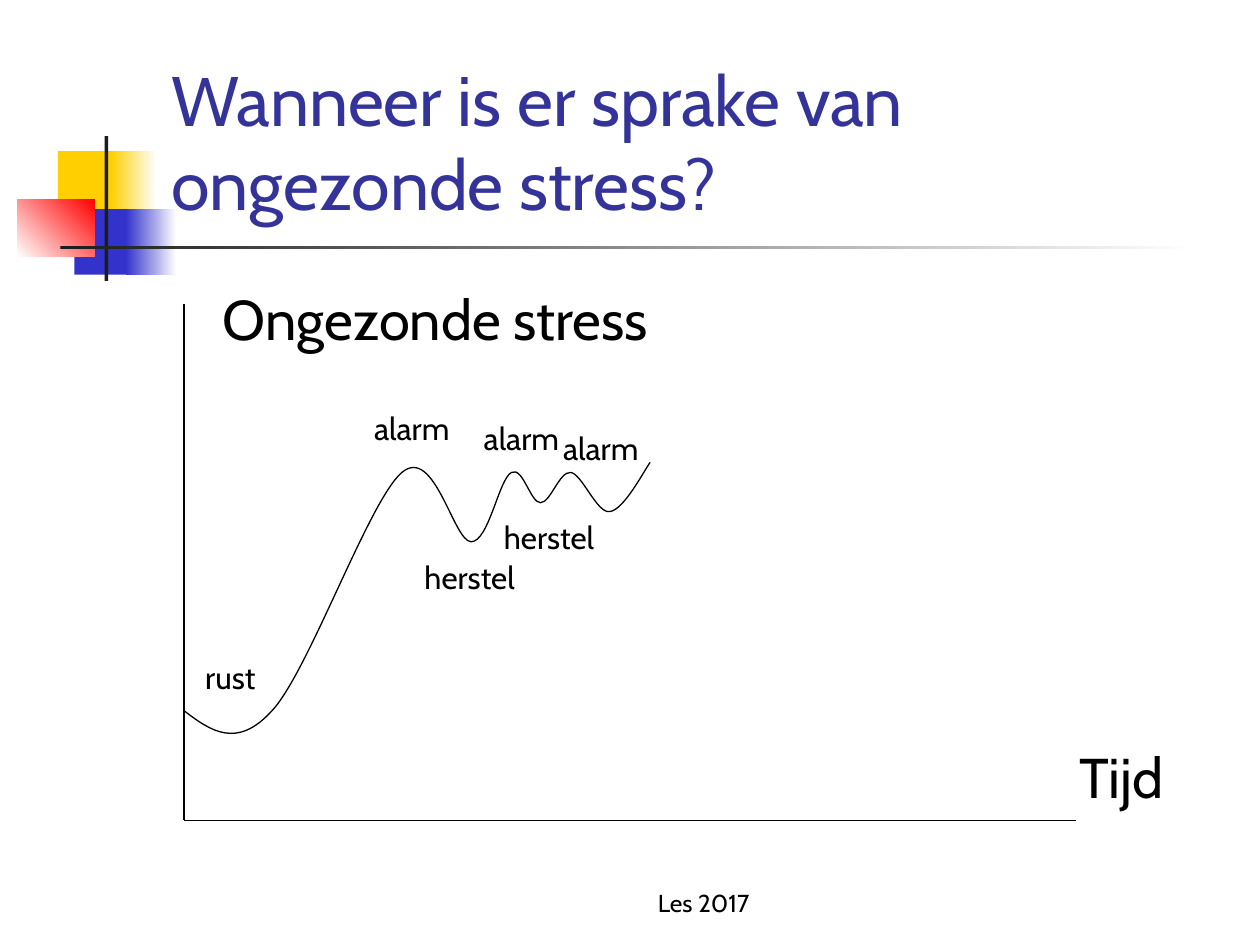
"""Build a slide that shows the course of unhealthy stress over time."""
from typing import NamedTuple

from lxml.etree import SubElement
from pptx import Presentation
from pptx.dml.color import RGBColor
from pptx.enum.shapes import MSO_CONNECTOR, MSO_SHAPE
from pptx.enum.text import MSO_ANCHOR, MSO_AUTO_SIZE, PP_ALIGN
from pptx.oxml.ns import qn
from pptx.util import Inches, Pt

FONT = "Cabin"
BLACK, WHITE, CHARCOAL = "000000", "FFFFFF", "1C1C1C"
YELLOW, BLUE, RED, NAVY = "FFCF01", "3333CC", "FF0000", "333399"


class Box(NamedTuple):
    left: float
    top: float
    width: float
    height: float


class Block(NamedTuple):
    box: Box
    start: str
    end: str = ""
    angle: int = 0


class Label(NamedTuple):
    text: str
    box: Box
    size: int = 18
    space_before: float = 3.6


BLOCKS = [
    Block(Box(0.46, 1.2, 0.48, 0.52), YELLOW),
    Block(Box(0.88, 1.2, 0.36, 0.52), YELLOW, WHITE),
    Block(Box(0.59, 1.66, 0.46, 0.52), BLUE),
    Block(Box(1, 1.66, 0.4, 0.52), BLUE, WHITE),
    Block(Box(0.14, 1.58, 0.61, 0.46), WHITE, RED, 45),
    Block(Box(0.83, 1.08, 0.03, 1.15), CHARCOAL),
    Block(Box(0.48, 1.95, 9, 0.03), CHARCOAL, WHITE),
]
LABELS = [
    Label("Tijd", Box(8.47, 5.84, 0.94, 0.63), 32, 0),
    Label("rust", Box(1.53, 5.17, 0.62, 0.4)),
    Label("alarm", Box(2.87, 3.2, 0.82, 0.4), space_before=0),
    Label("herstel", Box(3.27, 4.38, 0.95, 0.4)),
    Label("alarm", Box(3.74, 3.28, 0.82, 0.4)),
    Label("herstel", Box(3.9, 4.06, 0.95, 0.4)),
    Label("alarm", Box(4.37, 3.36, 0.82, 0.4)),
]
ORIGIN, AXIS_TOP, AXIS_END = (1.46, 6.51), (1.46, 2.41), (8.54, 6.51)
STRESS_START = (1.46, 5.64)
STRESS_CURVE = [
    (1.67, 5.8), (1.88, 5.95), (2.16, 5.64),
    (2.45, 5.33), (2.93, 3.97), (3.19, 3.75),
    (3.45, 3.53), (3.6, 4.3), (3.74, 4.3),
    (3.88, 4.3), (3.96, 3.8), (4.06, 3.75),
    (4.15, 3.7), (4.21, 3.99), (4.29, 3.99),
    (4.37, 3.99), (4.44, 3.74), (4.53, 3.75),
    (4.62, 3.76), (4.74, 4.08), (4.84, 4.06),
    (4.95, 4.05), (5.11, 3.74), (5.16, 3.67),
]


def color(value: str) -> RGBColor:
    return RGBColor.from_string(value)


def lengths(values) -> list:
    return [Inches(value) for value in values]


def style_text(frame, text: str, size: int, ink: str = BLACK,
               align=PP_ALIGN.LEFT, space_before: float = 0):
    frame.text = text
    paragraph = frame.paragraphs[0]
    paragraph.alignment = align
    paragraph.space_before = Pt(space_before)
    font = paragraph.runs[0].font
    font.name, font.size = FONT, Pt(size)
    font.color.rgb = color(ink)
    return paragraph


def style_line(line) -> None:
    line.color.rgb = color(BLACK)
    line.width = Pt(0.75)


def add_block(slide, block: Block) -> None:
    rectangle = slide.shapes.add_shape(MSO_SHAPE.RECTANGLE, *lengths(block.box))
    rectangle.shadow.inherit = False
    rectangle.line.fill.background()
    fill = rectangle.fill
    if not block.end:
        fill.solid()
        fill.fore_color.rgb = color(block.start)
        return
    fill.gradient()
    fill.gradient_angle = block.angle
    for stop, shade in zip(fill.gradient_stops, (block.start, block.end)):
        stop.color.rgb = color(shade)


def add_title(slide) -> None:
    title = slide.shapes.title
    title.left, title.top, title.width, title.height = lengths((1.26, 0.23, 8.52, 1.6))
    frame = title.text_frame
    frame.word_wrap, frame.auto_size = True, MSO_AUTO_SIZE.NONE
    frame.vertical_anchor = MSO_ANCHOR.BOTTOM
    style_text(frame, "Wanneer is er sprake van ongezonde stress?", 40, NAVY)


def add_heading(slide) -> None:
    frame = slide.shapes.add_textbox(*lengths((1.29, 2.21, 8.5, 4.5))).text_frame
    frame.word_wrap = True
    heading = style_text(frame, "Ongezonde stress", 32, space_before=6.4)
    heading._p.get_or_add_pPr().set("marL", str(Inches(0.38)))


def add_footer(slide) -> None:
    frame = slide.shapes.add_textbox(*lengths((4, 6.83, 3.17, 0.5))).text_frame
    frame.word_wrap = True
    frame.vertical_anchor = MSO_ANCHOR.BOTTOM
    style_text(frame, "Les 2017", 14, align=PP_ALIGN.CENTER)


def add_label(slide, label: Label) -> None:
    frame = slide.shapes.add_textbox(*lengths(label.box)).text_frame
    frame.word_wrap, frame.auto_size = False, MSO_AUTO_SIZE.SHAPE_TO_FIT_TEXT
    style_text(frame, label.text, label.size, space_before=label.space_before)


def add_axis(slide, start: tuple, end: tuple) -> None:
    axis = slide.shapes.add_connector(
        MSO_CONNECTOR.STRAIGHT, *lengths(start), *lengths(end))
    style_line(axis.line)
    SubElement(axis._element.spPr, qn("a:effectLst"))


def add_stress_curve(slide) -> None:
    builder = slide.shapes.build_freeform(*STRESS_START, scale=Inches(1) / 1.0)
    builder = slide.shapes.build_freeform(*lengths(STRESS_START))
    builder.add_line_segments([lengths(point) for point in STRESS_CURVE], close=False)
    curve = builder.convert_to_shape()
    curve.shadow.inherit = False
    curve.fill.background()
    style_line(curve.line)
    outline = curve._element.find(".//" + qn("a:path"))
    segments = outline.findall(qn("a:lnTo"))
    for first in range(0, len(segments), 3):
        bezier = SubElement(outline, qn("a:cubicBezTo"))
        for segment in segments[first:first + 3]:
            bezier.append(segment[0])
            outline.remove(segment)


def main() -> None:
    presentation = Presentation()
    presentation.slide_width, presentation.slide_height = Inches(10), Inches(7.5)
    slide = presentation.slides.add_slide(presentation.slide_layouts[5])
    for block in BLOCKS:
        add_block(slide, block)
    add_footer(slide)
    add_title(slide)
    add_heading(slide)
    add_axis(slide, AXIS_TOP, ORIGIN)
    add_axis(slide, ORIGIN, AXIS_END)
    add_stress_curve(slide)
    for label in LABELS:
        add_label(slide, label)
    presentation.save("out.pptx")


if __name__ == "__main__":
    main()
